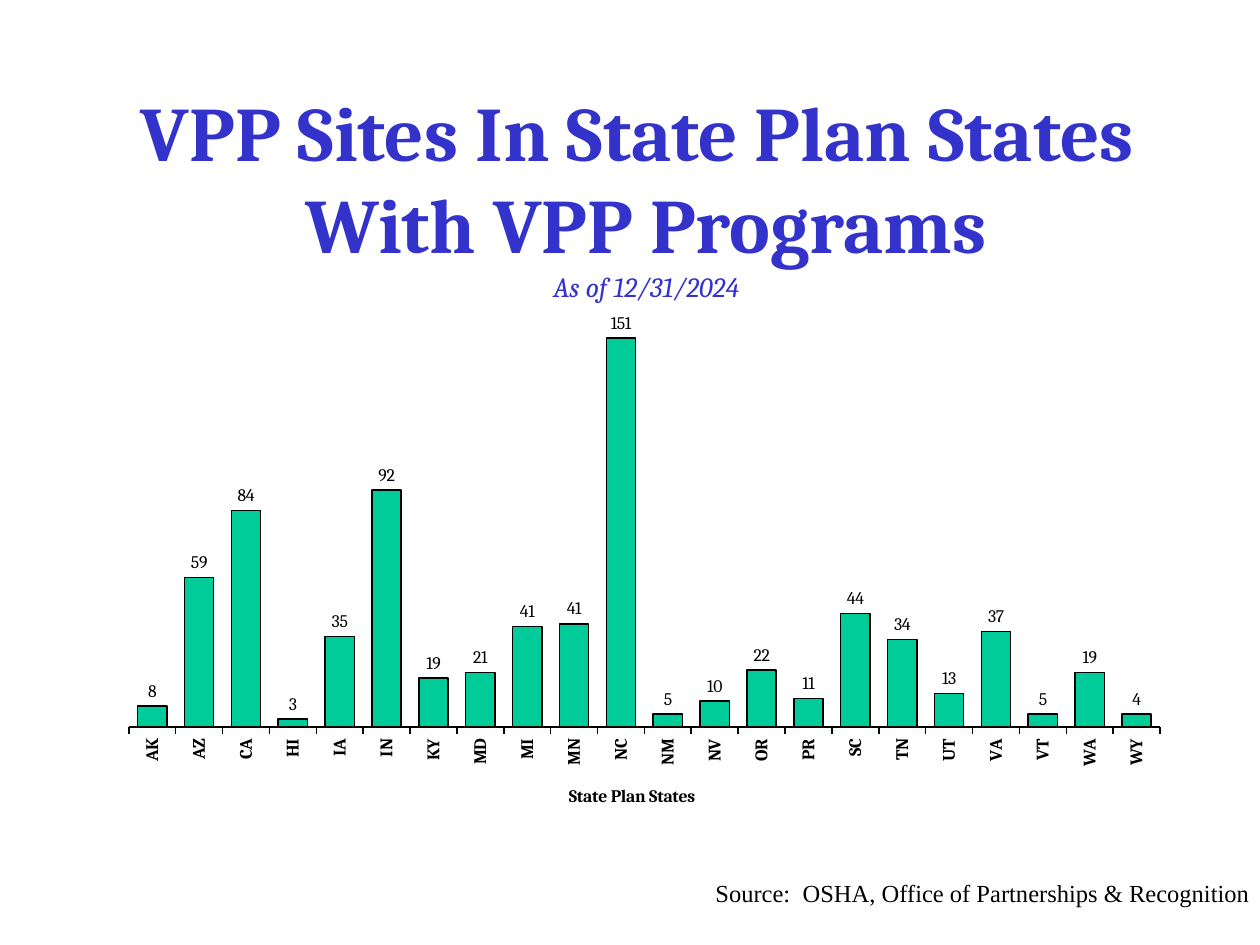
from lxml.etree import SubElement
from pptx import Presentation
from pptx.chart.data import CategoryChartData
from pptx.dml.color import RGBColor
from pptx.enum.chart import XL_CHART_TYPE, XL_LABEL_POSITION, XL_TICK_LABEL_POSITION, XL_TICK_MARK
from pptx.enum.text import PP_ALIGN
from pptx.oxml.ns import qn
from pptx.util import Inches, Pt

# Content
TITLE = [  # text, size, bold, italic
    ("VPP Sites In State Plan States ", 44, True, False),
    ("With VPP Programs", 44, True, False),
    ("As of 12/31/2024", 16, False, True),
]
SITES = {
    "AK": 8, "AZ": 58, "CA": 84, "HI": 3, "IA": 35, "IN": 92, "KY": 19, "MD": 21,
    "MI": 39, "MN": 40, "NC": 151, "NM": 5, "NV": 10, "OR": 22, "PR": 11, "SC": 44,
    "TN": 34, "UT": 13, "VA": 37, "VT": 5, "WA": 21, "WY": 5,
}
# Labels whose wording differs from the plotted value
LABELS = {"AZ": "59", "MI": "41", "MN": "41", "WA": "19", "WY": "4"}
AXIS_TITLE = "State Plan States "
SOURCE = "Source:  OSHA, Office of Partnerships & Recognition"

BLUE, GREEN, BLACK = "3333CC", "00CC99", "000000"


def color(value):
    return RGBColor.from_string(value)


def set_font(font, name, size, value, bold=False, italic=False):
    font.name, font.size = name, Pt(size)
    font.bold, font.italic = bold, italic
    font.color.rgb = color(value)


def chart_font(font, bold=False):
    set_font(font, "Cambria", 10.1, BLACK, bold)


def set_line(line):
    line.color.rgb = color(BLACK)
    line.width = Pt(0.88)


def set_layout(parent, index, **values):
    """Place a chart part by fractions of the chart's frame."""
    for old in parent.findall(qn("c:layout")):
        parent.remove(old)
    layout = SubElement(parent, qn("c:layout"))
    parent.insert(index, layout)
    manual = SubElement(layout, qn("c:manualLayout"))
    for tag, value in values.items():
        SubElement(manual, qn(f"c:{tag}")).set("val", str(value))


presentation = Presentation()
presentation.slide_width, presentation.slide_height = Inches(10), Inches(7.5)
slide = presentation.slides.add_slide(presentation.slide_layouts[6])

# Title
title_box = slide.shapes.add_textbox(Inches(0.67), Inches(0.62), Inches(8.92), Inches(1.85))
title_frame = title_box.text_frame
title_frame.word_wrap = True
for index, (text, size, bold, italic) in enumerate(TITLE):
    paragraph = title_frame.add_paragraph() if index else title_frame.paragraphs[0]
    paragraph.text = text
    paragraph.alignment = PP_ALIGN.CENTER
    set_font(paragraph.font, "Cambria", size, BLUE, bold, italic)

# Column chart
chart_data = CategoryChartData()
chart_data.categories = list(SITES)
chart_data.add_series("Series 1", list(SITES.values()))
chart = slide.shapes.add_chart(
    XL_CHART_TYPE.COLUMN_CLUSTERED,
    Inches(0.75), Inches(2.42), Inches(8.5), Inches(4.25), chart_data,
).chart
chart.has_legend = chart.has_title = False
chart_font(chart.font, bold=True)
plot = chart.plots[0]
plot.gap_width = 60
plot.vary_by_categories = False
set_layout(chart._chartSpace.chart.plotArea, 0, layoutTarget="inner", xMode="edge", yMode="edge",
           x=0.032, y=0.019, w=0.963, h=0.769)

# Columns and their labels
series = plot.series[0]
series.format.fill.solid()
series.format.fill.fore_color.rgb = color(GREEN)
set_line(series.format.line)
labels = series.data_labels
labels.show_value = True
labels.number_format, labels.number_format_is_linked = "General", False
labels.position = XL_LABEL_POSITION.OUTSIDE_END
chart_font(labels.font)
for index, state in enumerate(SITES):
    if state in LABELS:
        label = series.points[index].data_label
        paragraph = label.text_frame.paragraphs[0]
        paragraph.text = LABELS[state]
        chart_font(paragraph.font)
        chart_font(paragraph.runs[0].font)
        label.position = XL_LABEL_POSITION.OUTSIDE_END

# Category axis
category_axis = chart.category_axis
category_axis.tick_label_position = XL_TICK_LABEL_POSITION.LOW
category_axis.major_tick_mark = XL_TICK_MARK.OUTSIDE
set_line(category_axis.format.line)
chart_font(category_axis.tick_labels.font, bold=True)
category_axis._element.find(qn("c:txPr")).find(qn("a:bodyPr")).set("rot", "-5400000")
axis_title = category_axis.axis_title
paragraph = axis_title.text_frame.paragraphs[0]
paragraph.text = AXIS_TITLE
chart_font(paragraph.font, bold=True)
chart_font(paragraph.runs[0].font, bold=True)
set_layout(axis_title._element, 1, xMode="edge", yMode="edge", x=0.44, y=0.89)

# Hidden value axis
value_axis = chart.value_axis
value_axis.minimum_scale, value_axis.maximum_scale = 0, 160
value_axis.has_major_gridlines = False
value_axis.major_tick_mark = XL_TICK_MARK.NONE
value_axis.tick_label_position = XL_TICK_LABEL_POSITION.NONE
value_axis.format.line.fill.background()

# Source note
source_box = slide.shapes.add_textbox(Inches(5.33), Inches(6.97), Inches(4.59), Inches(0.51))
source_frame = source_box.text_frame
source_frame.word_wrap = True
source_frame.margin_left = source_frame.margin_right = 0
source_frame.margin_top = source_frame.margin_bottom = 0
paragraph = source_frame.paragraphs[0]
paragraph.text = SOURCE
paragraph.alignment = PP_ALIGN.RIGHT
set_font(paragraph.font, "Times New Roman", 14, BLACK)

presentation.save("out.pptx")
